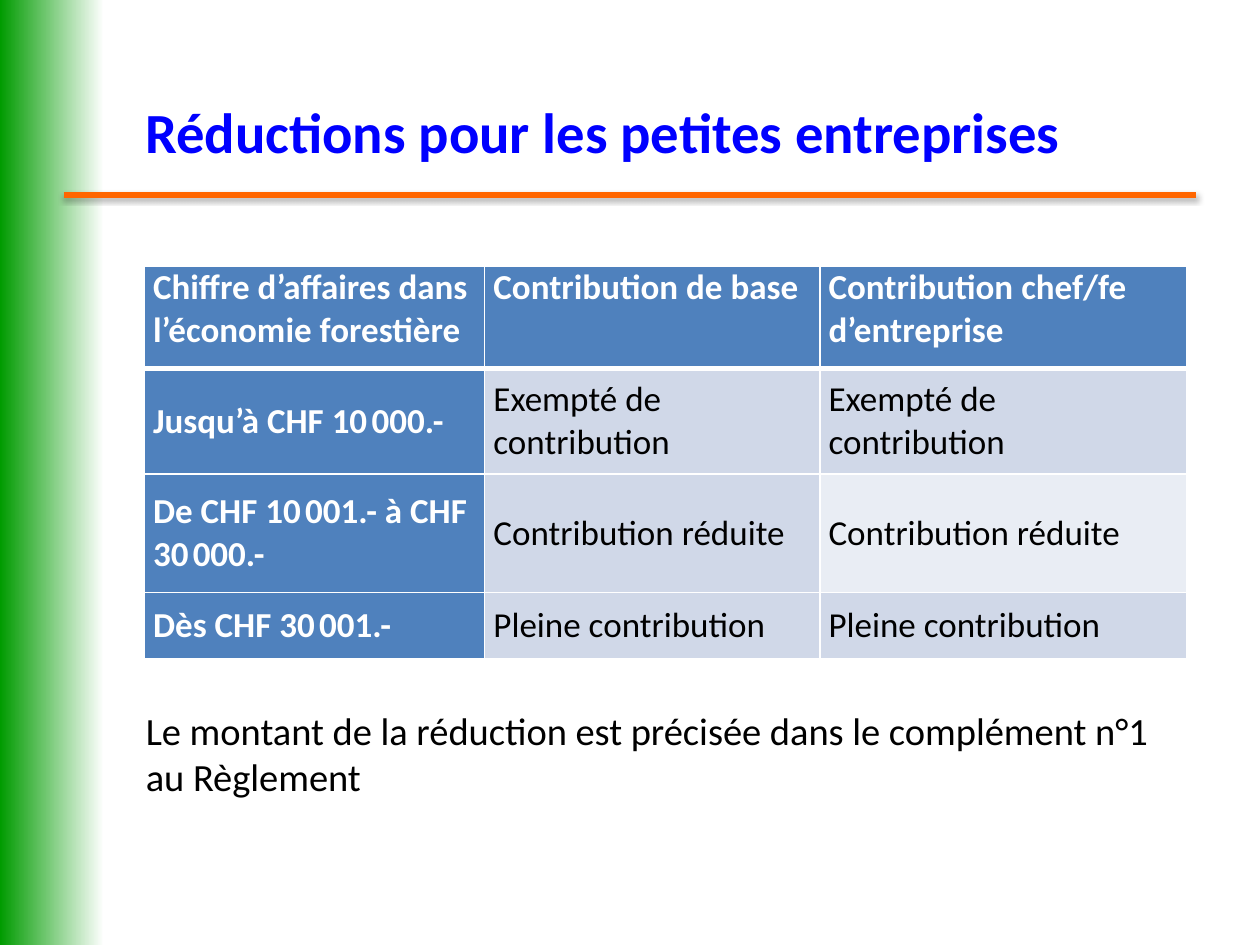
import pptx
import pptx.util
import pptx.dml.color
import pptx.enum.shapes
import pptx.enum.text
import pptx.oxml
import pptx.oxml.ns

Pt = pptx.util.Pt
ANCHOR = pptx.enum.text.MSO_ANCHOR
NS = pptx.oxml.ns.nsdecls("a")
BLUE, PALE, LIGHT = "4F81BD", "D0D8E8", "E9EDF4"
WIDTHS = [194.5, 191.5, 209.5]
HEIGHTS = [58.5, 60.5, 67.5, 38]
ROWS = [
    ["Chiffre d’affaires dans l’économie forestière", "Contribution de base",
     "Contribution chef/fe d’entreprise"],
    ["Jusqu’à CHF 10_000.-", "Exempté de contribution", "Exempté de contribution"],
    ["De CHF 10_001.- à CHF 30_000.-", "Contribution réduite", "Contribution réduite"],
    ["Dès CHF 30_001.-", "Pleine contribution", "Pleine contribution"],
]


def rgb(code):
    return pptx.dml.color.RGBColor.from_string(code)


def write(frame, text, size=20, color="000000", bold=False, gap=0,
          anchor=ANCHOR.TOP):
    frame.word_wrap = True
    frame.vertical_anchor = anchor
    para = frame.paragraphs[0]
    para.alignment = pptx.enum.text.PP_ALIGN.LEFT
    para.space_before = para.space_after = Pt(gap)
    for i, part in enumerate(text.split("_")):
        pieces = [(part, size)] if i == 0 else [(" ", 10.5), (part, size)]
        for words, high in pieces:
            run = para.add_run()
            run.text = words
            run.font.name = "Calibri"
            run.font.size = Pt(high)
            run.font.bold = bold
            run.font.color.rgb = rgb(color)


def add_band(slide, x, y, w, h):
    band = slide.shapes.add_shape(
        pptx.enum.shapes.MSO_SHAPE.RECTANGLE, Pt(x), Pt(y), Pt(w), Pt(h))
    band.shadow.inherit = False
    band.line.fill.background()
    band.fill.gradient()
    band.fill.gradient_angle = 0
    for stop, code in zip(band.fill.gradient_stops, ["009B00", "FFFFFF"]):
        stop.color.rgb = rgb(code)


def add_rule(slide, x, y, w):
    rule = slide.shapes.add_connector(
        pptx.enum.shapes.MSO_CONNECTOR.STRAIGHT, Pt(x), Pt(y), Pt(x + w), Pt(y))
    rule.line.color.rgb = rgb("FF6600")
    rule.line.width = Pt(3)
    rule._element.spPr.append(pptx.oxml.parse_xml(
        f'<a:effectLst {NS}><a:outerShdw blurRad="{Pt(3.1)}" dist="{Pt(1.6)}" '
        'dir="5400000" rotWithShape="0"><a:srgbClr val="000000">'
        '<a:alpha val="38000"/></a:srgbClr></a:outerShdw></a:effectLst>'))


def add_title(slide, x, y, w, h):
    title = slide.shapes.title
    title.left, title.top, title.width, title.height = map(Pt, (x, y, w, h))
    title.text_frame.auto_size = pptx.enum.text.MSO_AUTO_SIZE.NONE
    write(title.text_frame, "Réductions pour les petites entreprises",
          size=32.4, color="0000FF", bold=True, anchor=ANCHOR.MIDDLE)


def edge(cell, sides):
    props = cell._tc.get_or_add_tcPr()
    for i, (side, width) in enumerate(sides.items()):
        props.insert(i, pptx.oxml.parse_xml(
            f'<a:ln{side} {NS} w="{Pt(width)}"><a:solidFill>'
            f'<a:srgbClr val="FFFFFF"/></a:solidFill></a:ln{side}>'))


def add_grid(slide, x, y, w, h):
    table = slide.shapes.add_table(
        len(ROWS), len(WIDTHS), Pt(x), Pt(y), Pt(w), Pt(h)).table
    for col, width in zip(table.columns, WIDTHS):
        col.width = Pt(width)
    for row, height in zip(table.rows, HEIGHTS):
        row.height = Pt(height)
    for r, row in enumerate(ROWS):
        for c, text in enumerate(row):
            cell = table.cell(r, c)
            head = r == 0 or c == 0
            cell.margin_left = cell.margin_right = Pt(5)
            cell.margin_top = cell.margin_bottom = 0
            cell.vertical_anchor = ANCHOR.TOP if r == 0 else ANCHOR.MIDDLE
            cell.fill.solid()
            fill = BLUE if head else LIGHT if (r, c) == (2, 2) else PALE
            cell.fill.fore_color.rgb = rgb(fill)
            write(cell.text_frame, text, color="FFFFFF" if head else "000000",
                  bold=head, gap=4, anchor=cell.vertical_anchor)
            edge(cell, {"L": 1, "R": 1, "T": 3 if r == 1 else 1,
                        "B": 3 if r == 0 else 1})


def add_note(slide, x, y, w, h):
    note = slide.shapes.add_textbox(Pt(x), Pt(y), Pt(w), Pt(h))
    write(note.text_frame, "Le montant de la réduction est précisée dans le "
          "complément n°1 au Règlement", size=22)


def main():
    deck = pptx.Presentation()
    deck.slide_width, deck.slide_height = Pt(720), Pt(540)
    slide = deck.slides.add_slide(deck.slide_layouts[5])
    add_band(slide, 0, 0, 59.5, 540)
    add_rule(slide, 36.5, 111.5, 647)
    add_title(slide, 75.75, 43.5, 618.5, 62.5)
    add_grid(slide, 82.5, 152, sum(WIDTHS), sum(HEIGHTS))
    add_note(slide, 76.25, 400.5, 595.5, 60.5)
    deck.save("out.pptx")


if __name__ == "__main__":
    main()
